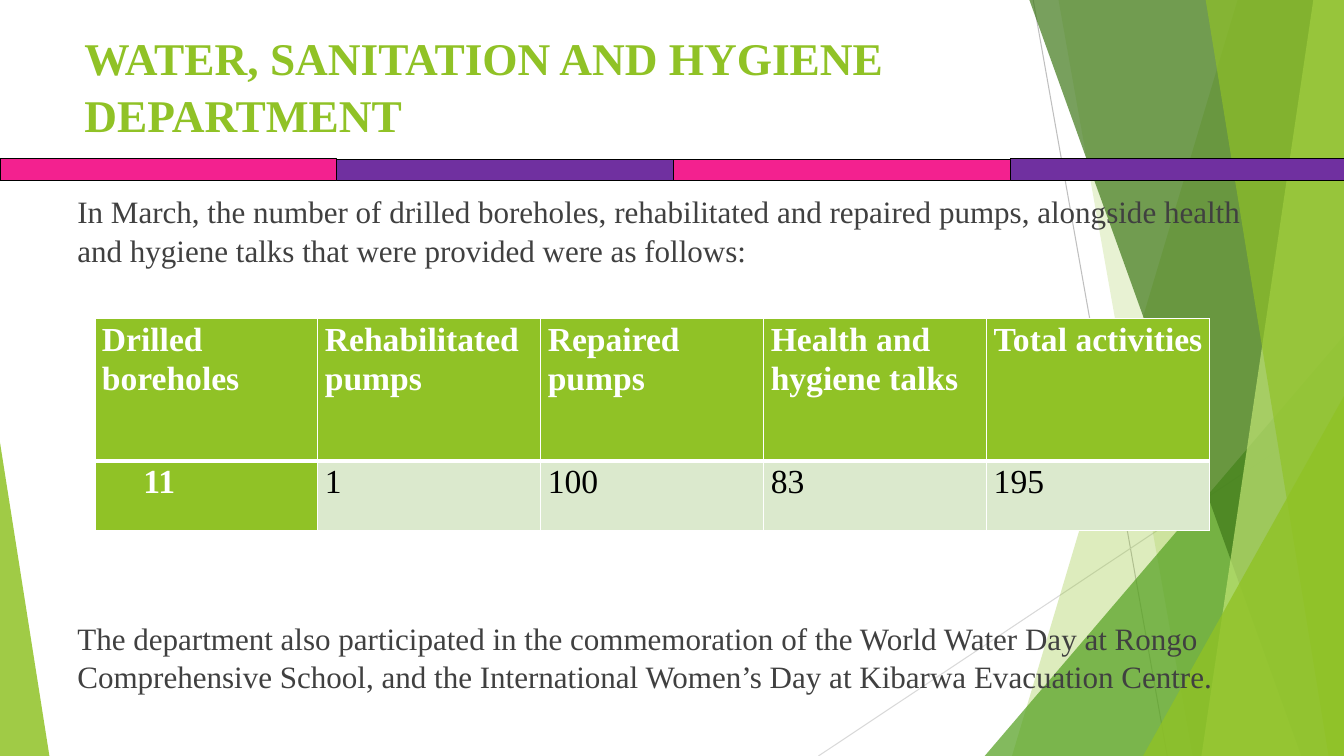
"""Build the water, sanitation and hygiene department slide."""
from lxml import etree
from pptx import Presentation
from pptx.dml.color import RGBColor
from pptx.enum.shapes import MSO_CONNECTOR, MSO_SHAPE
from pptx.enum.text import MSO_ANCHOR
from pptx.oxml.ns import qn
from pptx.util import Pt

LINE = MSO_CONNECTOR.STRAIGHT
RECT, TRI = MSO_SHAPE.RECTANGLE, MSO_SHAPE.ISOSCELES_TRIANGLE
TOP, MIDDLE = MSO_ANCHOR.TOP, MSO_ANCHOR.MIDDLE
FONT = "Times New Roman"
WIDE, HIGH = 960, 540

HUES = {
    "lime": "90C226", "leaf": "54A021", "moss": "3F7819", "pale": "C0E474",
    "mint": "DBE9CD", "pink": "F3218F", "plum": "7030A0", "ink": "404040",
    "black": "000000", "white": "FFFFFF", "gray": "BFBFBF", "mist": "D9D9D9",
}

TITLE = "WATER, SANITATION AND HYGIENE DEPARTMENT"
BODY = [
    "In March, the number of drilled boreholes, rehabilitated and repaired pumps, "
    "alongside health and hygiene talks that were provided were as follows:",
    "The department also participated in the commemoration of the World Water Day "
    "at Rongo Comprehensive School, and the International Women’s Day at Kibarwa "
    "Evacuation Centre.",
]
ROWS = [
    ["Drilled boreholes", "Rehabilitated pumps", "Repaired pumps",
     "Health and hygiene talks", "Total activities"],
    ["\t11", "1", "100", "83", "195"],
]
TALL = [101.5, 49.7]

RAYS = [((738, 0), (833.8, 540), "gray"), ((960, 290.2), (584.6, 540), "mist")]
# Each facet is a wedge (top x, foot x) or a triangle (left, top, width, apex).
FACETS = [
    ((884.2, 722.9), "lime", 30),
    ((756, 851.8), "lime", 20),
    ((703.4, 239.8, 256.6, 1), "leaf", 72),
    ((735.1, 929.5), "moss", 70),
    ((938.2, 858.2), "pale", 70),
    ((861.1, 949), "lime", 65),
    ((816.5, 283, 143.5, 1), "lime", 80),
    ((0, 316.1, 35.3, 0), "lime", 85),
]
BARS = [(1, "plum"), (3, "plum"), (2, "pink"), (0, "pink")]
BAR = 240.7


def hue(name):
    return RGBColor.from_string(HUES[name])


def paint(shape, name, alpha=100, edge=None):
    shape.shadow.inherit = False
    shape.fill.solid()
    shape.fill.fore_color.rgb = hue(name)
    if alpha < 100:
        tone = shape._element.spPr.find(qn("a:solidFill"))[0]
        etree.SubElement(tone, qn("a:alpha"), val=str(alpha * 1000))
    if edge:
        shape.line.color.rgb = hue(edge)
        shape.line.width = Pt(0)
    else:
        shape.line.fill.background()


def add_ray(start, end, name):
    ray = shapes.add_connector(LINE, *map(Pt, start + end))
    ray.line.color.rgb = hue(name)
    ray.line.width = Pt(0.75)
    etree.SubElement(ray._element.spPr, qn("a:effectLst"))


def add_facet(form, name, alpha):
    if len(form) == 2:
        head, foot = form
        pen = shapes.build_freeform(Pt(head), Pt(-0.6))
        rest = [(WIDE, -0.6), (WIDE, HIGH), (foot, HIGH)]
        pen.add_line_segments([(Pt(x), Pt(y)) for x, y in rest], close=True)
        facet = pen.convert_to_shape()
    else:
        left, top, width, apex = form
        facet = shapes.add_shape(TRI, Pt(left), Pt(top), Pt(width), Pt(HIGH - top))
        facet.adjustments[0] = apex
    paint(facet, name, alpha)


def style(para, size, name, bold=False):
    font = para.font
    font.name, font.size, font.bold = FONT, Pt(size), bold
    font.color.rgb = hue(name)


def add_text(area, lines, size, name, bold, pitch, gap, anchor):
    frame = shapes.add_textbox(*map(Pt, area)).text_frame
    frame.word_wrap = True
    frame.vertical_anchor = anchor
    for num, line in enumerate(lines):
        para = frame.add_paragraph() if num else frame.paragraphs[0]
        para.text = line
        para.line_spacing = pitch
        if num:
            para.space_before = Pt(gap)
        style(para, size, name, bold)


def add_edges(cell, foot):
    props = cell._tc.get_or_add_tcPr()
    for side, width in (("L", 1), ("R", 1), ("T", 1), ("B", foot)):
        edge = etree.SubElement(props, qn("a:ln" + side), w=str(Pt(width)))
        fill = etree.SubElement(edge, qn("a:solidFill"))
        etree.SubElement(fill, qn("a:srgbClr"), val=HUES["white"])


def fill_cell(cell, text, row, col):
    key = row == 0 or col == 0
    add_edges(cell, 1 if row else 3)
    cell.fill.solid()
    cell.fill.fore_color.rgb = hue("lime" if key else "mint")
    cell.margin_left = cell.margin_right = Pt(5)
    cell.margin_top = cell.margin_bottom = 0
    para = cell.text_frame.paragraphs[0]
    para.text = text
    para.line_spacing = 1.07
    para.space_after = Pt(8)
    if text.startswith("\t"):
        tabs = etree.SubElement(para._p.get_or_add_pPr(), qn("a:tabLst"))
        etree.SubElement(tabs, qn("a:tab"), pos=str(Pt(41)), algn="ctr")
    style(para, 24, "white" if key else "black", key)


def add_grid():
    area = map(Pt, (67.8, 227.6, 796.3, sum(TALL)))
    grid = shapes.add_table(len(ROWS), len(ROWS[0]), *area).table
    for row, line in enumerate(ROWS):
        grid.rows[row].height = Pt(TALL[row])
        for col, text in enumerate(line):
            fill_cell(grid.cell(row, col), text, row, col)


deck = Presentation()
deck.slide_width, deck.slide_height = Pt(WIDE), Pt(HIGH)
shapes = deck.slides.add_slide(deck.slide_layouts[6]).shapes

for ray in RAYS:
    add_ray(*ray)
for facet in FACETS:
    add_facet(*facet)
band = shapes.add_shape(RECT, 0, Pt(115.2), Pt(WIDE), Pt(13.7))
paint(band, "plum", 96)
for slot, name in BARS:
    top, height = (113.5, 15.5) if slot in (0, 3) else (114, 15)
    bar = shapes.add_shape(RECT, Pt(slot * BAR), Pt(top), Pt(BAR), Pt(height))
    paint(bar, name, edge="black")
add_text((53.3, 15.1, 676.8, 90.7), [TITLE], 32.4, "lime", True, 1.05, 0, MIDDLE)
add_text((48.2, 133.2, 864, 374.4), BODY, 22.2, "ink", False, 1.03, 250, TOP)
add_grid()
deck.save("out.pptx")
